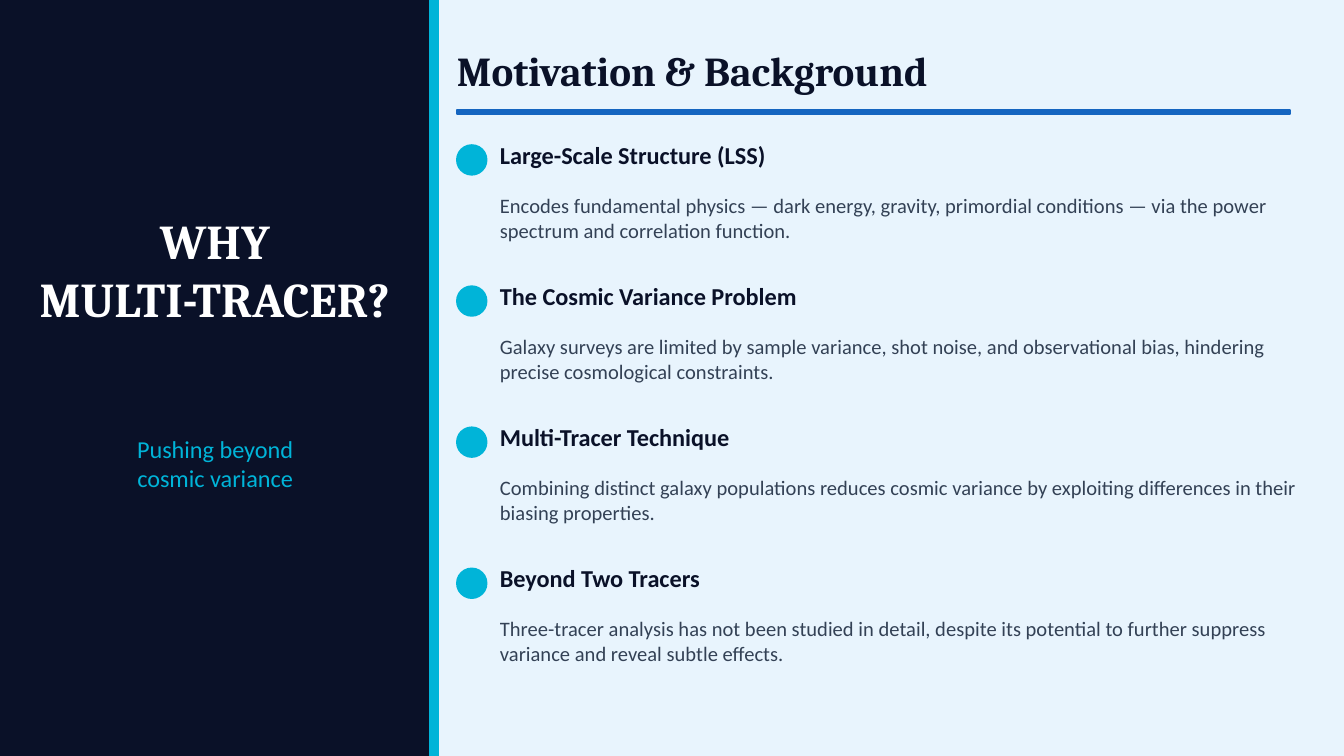
from pptx import Presentation
from pptx.dml.color import RGBColor
from pptx.enum.shapes import MSO_SHAPE
from pptx.enum.text import MSO_ANCHOR, MSO_AUTO_SIZE, PP_ALIGN
from pptx.util import Pt

RECTANGLE, OVAL = MSO_SHAPE.RECTANGLE, MSO_SHAPE.OVAL
MIDDLE, NO_FIT = MSO_ANCHOR.MIDDLE, MSO_AUTO_SIZE.NONE
LEFT, CENTER = PP_ALIGN.LEFT, PP_ALIGN.CENTER

NAVY = RGBColor(0x0A, 0x11, 0x28)
CYAN = RGBColor(0x00, 0xB4, 0xD8)
BLUE = RGBColor(0x15, 0x65, 0xC0)
SLATE = RGBColor(0x33, 0x41, 0x55)
PALE = RGBColor(0xE8, 0xF4, 0xFD)
WHITE = RGBColor(0xFF, 0xFF, 0xFF)

HEADING_FONT, BODY_FONT = "Cambria", "Calibri"
PAGE_WIDTH, PAGE_HEIGHT = 720, 405
PANEL_WIDTH = 230.4
TOPIC_PITCH = 75.6

TOPICS = [
    ("Large-Scale Structure (LSS)",
     "Encodes fundamental physics — dark energy, gravity, primordial conditions — "
     "via the power spectrum and correlation function."),
    ("The Cosmic Variance Problem",
     "Galaxy surveys are limited by sample variance, shot noise, and observational "
     "bias, hindering precise cosmological constraints."),
    ("Multi-Tracer Technique",
     "Combining distinct galaxy populations reduces cosmic variance by exploiting "
     "differences in their biasing properties."),
    ("Beyond Two Tracers",
     "Three-tracer analysis has not been studied in detail, despite its potential "
     "to further suppress variance and reveal subtle effects."),
]


def add_block(page, kind, left, top, width, height, color):
    block = page.shapes.add_shape(kind, Pt(left), Pt(top), Pt(width), Pt(height))
    block.shadow.inherit = False
    block.fill.solid()
    block.fill.fore_color.rgb = color
    block.line.color.rgb = color
    block.line.width = Pt(1)


def write_text(page, text, left, top, width, height, *, size, color,
               font=BODY_FONT, bold=False, align=LEFT, box=None):
    """Write one paragraph per line, in the given box or a new text box."""
    place = Pt(left), Pt(top), Pt(width), Pt(height)
    if box is None:
        box = page.shapes.add_textbox(*place)
    else:
        box.left, box.top, box.width, box.height = place
    frame = box.text_frame
    frame.word_wrap = True
    frame.auto_size = NO_FIT
    frame.vertical_anchor = MIDDLE
    frame.margin_left = frame.margin_right = 0
    frame.margin_top = frame.margin_bottom = 0
    frame.text = text
    for para in frame.paragraphs:
        para.alignment = align
        for span in para.runs:
            span.font.name = font
            span.font.size = Pt(size)
            span.font.bold = bold
            span.font.color.rgb = color


def add_side_panel(page, left, top, width, height):
    add_block(page, RECTANGLE, left, top, width, height, NAVY)
    add_block(page, RECTANGLE, left + width, top, 4.32, height, CYAN)
    margin = 10.8
    inner = width - 2 * margin
    write_text(page, "WHY\nMULTI-TRACER?", left + margin, top + 86.4, inner, 115.2,
               size=26, color=WHITE, font=HEADING_FONT, bold=True, align=CENTER)
    write_text(page, "Pushing beyond\ncosmic variance", left + margin, top + 216,
               inner, 64.8, size=13, color=CYAN, align=CENTER)


def add_header(page, left, top, width, height):
    write_text(page, "Motivation & Background", left, top, width, height, size=22,
               color=NAVY, font=HEADING_FONT, bold=True, box=page.shapes.title)
    # Rule under the title
    add_block(page, RECTANGLE, left, top + height + 1.44, width - 14.4, 2.16, BLUE)


def add_topic(page, left, top, width, heading, detail):
    indent = 23.04
    add_block(page, OVAL, left, top + 5.76, 15.84, 15.84, CYAN)
    write_text(page, heading, left + indent, top, width - indent, 21.6,
               size=13, color=NAVY, bold=True)
    write_text(page, detail, left + indent, top + 23.04, width - indent, 43.2,
               size=11, color=SLATE)


def main():
    deck = Presentation()
    deck.slide_width, deck.slide_height = Pt(PAGE_WIDTH), Pt(PAGE_HEIGHT)
    title_only = deck.slide_layouts.get_by_name("Title Only")
    page = deck.slides.add_slide(title_only)
    page.background.fill.solid()
    page.background.fill.fore_color.rgb = PALE

    content_left = PANEL_WIDTH + 14.4
    add_side_panel(page, 0, 0, PANEL_WIDTH, PAGE_HEIGHT)
    add_header(page, content_left, 18, 460.8, 39.6)
    for index, (heading, detail) in enumerate(TOPICS):
        add_topic(page, content_left, 72 + index * TOPIC_PITCH, 462.24, heading, detail)

    deck.save("out.pptx")


if __name__ == "__main__":
    main()
